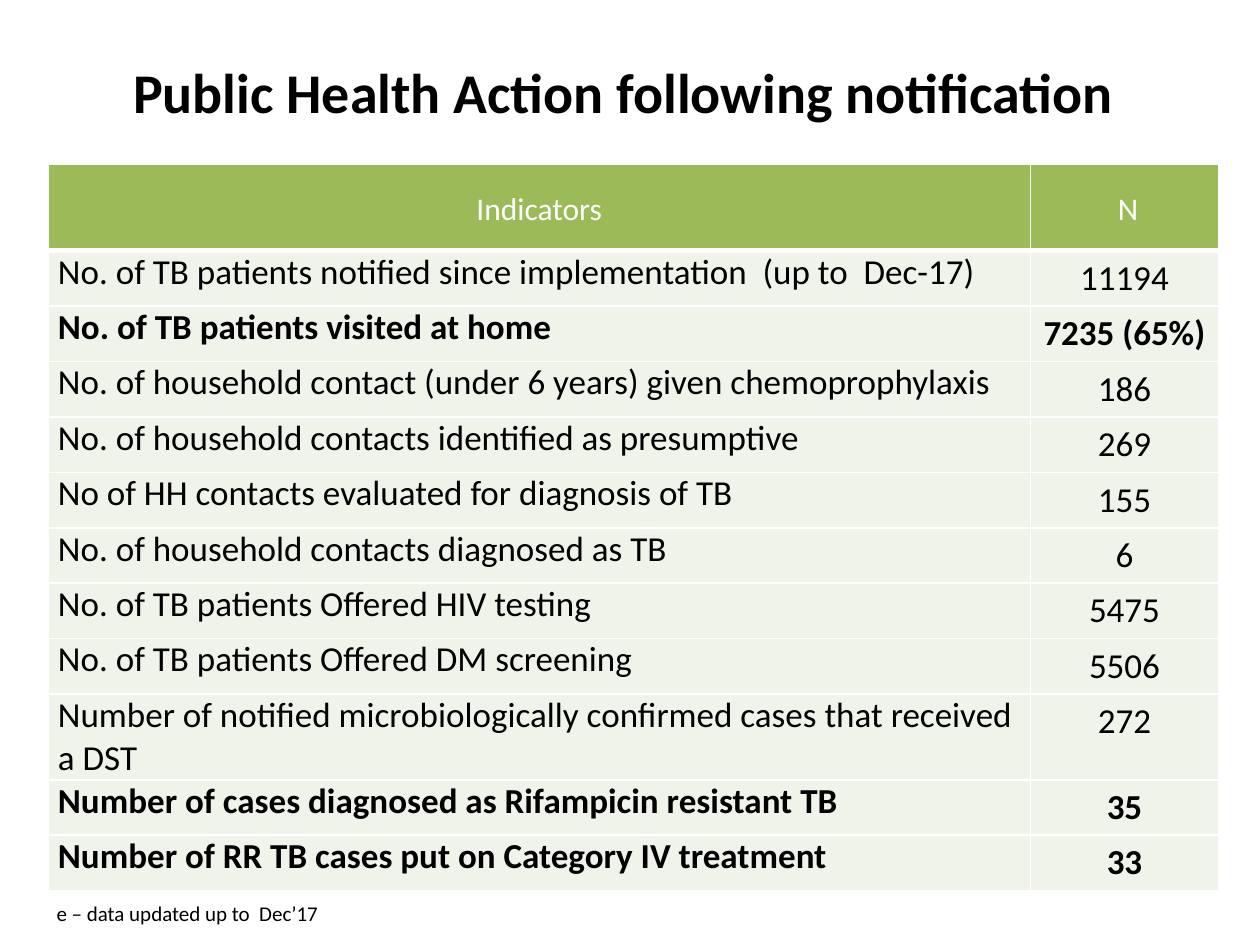
"""Build the slide on public health action following notification."""
from lxml import etree
from pptx import Presentation
from pptx.dml.color import RGBColor
from pptx.enum.text import MSO_ANCHOR, PP_ALIGN
from pptx.oxml.ns import qn
from pptx.util import Inches, Pt

TITLE = "Public Health Action following notification "
FOOTNOTE = "e – data updated up to  Dec’17"
HEADER = ("Indicators", " N")
INDICATORS = [
    ("No. of TB patients notified since implementation  (up to  Dec-17)", "11194"),
    ("No. of TB patients visited at home", "7235 (65%)"),
    ("No. of household contact (under 6 years) given chemoprophylaxis", "186"),
    ("No. of household contacts identified as presumptive", "269"),
    ("No of HH contacts evaluated for diagnosis of TB", "155"),
    ("No. of household contacts diagnosed as TB", "6"),
    ("No. of TB patients Offered HIV testing", "5475"),
    ("No. of TB patients Offered DM screening", "5506"),
    ("Number of notified microbiologically confirmed cases that received a DST", "272"),
    ("Number of cases diagnosed as Rifampicin resistant TB", "35"),
    ("Number of RR TB cases put on Category IV treatment", "33"),
]
BOLD_ROWS = {2, 10, 11}

BLACK = RGBColor(0x00, 0x00, 0x00)
WHITE = RGBColor(0xFF, 0xFF, 0xFF)
GREEN = RGBColor(0x9B, 0xBB, 0x59)
PALE_GREEN = RGBColor(0xEF, 0xF3, 0xEA)
CENTER, LEFT = PP_ALIGN.CENTER, PP_ALIGN.LEFT
MIDDLE, TOP = MSO_ANCHOR.MIDDLE, MSO_ANCHOR.TOP

SLIDE_SIZE = (10, 7.5)
TITLE_BOX = (0.5, 0.3, 9, 0.85)
FOOTNOTE_BOX = (0.35, 7.1, 9.29, 0.3)
TABLE_CORNER = (0.38, 1.3)
COLUMN_WIDTHS = (7.8, 1.49)
HEADER_HEIGHT, ROW_HEIGHT = 0.69, 0.44
CELL_FORMAT = {
    "margin_left": Inches(0.08), "margin_right": Inches(0.08),
    "margin_top": 0, "margin_bottom": 0,
}


def set_text(text_frame, text, size, color=BLACK, bold=False, **paragraph_format):
    text_frame.text = text
    paragraph = text_frame.paragraphs[0]
    for name, value in paragraph_format.items():
        setattr(paragraph, name, value)
    font = paragraph.runs[0].font
    font.color.rgb = color
    for name, value in {"name": "Calibri", "size": Pt(size), "bold": bold}.items():
        setattr(font, name, value)


def add_borders(cell, bottom_width):
    properties = cell._tc.get_or_add_tcPr()
    for side, width in (("L", 1), ("R", 1), ("T", 1), ("B", bottom_width)):
        line = etree.SubElement(properties, qn(f"a:ln{side}"), w=str(Pt(width)))
        fill = etree.SubElement(line, qn("a:solidFill"))
        etree.SubElement(fill, qn("a:srgbClr"), val=str(WHITE))


def add_indicator_table(slide):
    rows = [HEADER, *INDICATORS]
    heights = [HEADER_HEIGHT] + [ROW_HEIGHT] * len(INDICATORS)
    box = (*TABLE_CORNER, sum(COLUMN_WIDTHS), sum(heights))
    table = slide.shapes.add_table(len(rows), len(HEADER), *map(Inches, box)).table
    for column, width in zip(table.columns, COLUMN_WIDTHS):
        column.width = Inches(width)
    for row_index, (texts, height) in enumerate(zip(rows, heights)):
        is_header = row_index == 0
        table.rows[row_index].height = Inches(height)
        for column_index, text in enumerate(texts):
            centered = is_header or column_index == 1
            cell = table.cell(row_index, column_index)
            anchor = MIDDLE if is_header else TOP
            for name, value in {**CELL_FORMAT, "vertical_anchor": anchor}.items():
                setattr(cell, name, value)
            add_borders(cell, 3 if is_header else 1)
            cell.fill.solid()
            cell.fill.fore_color.rgb = GREEN if is_header else PALE_GREEN
            set_text(
                cell.text_frame, text, 18 if is_header else 20,
                WHITE if is_header else BLACK, row_index in BOLD_ROWS,
                alignment=CENTER if centered else LEFT,
                line_spacing=1.15 if centered else 1.0,
            )


def main():
    presentation = Presentation()
    presentation.slide_width, presentation.slide_height = map(Inches, SLIDE_SIZE)
    slide = presentation.slides.add_slide(presentation.slide_layouts[5])
    add_indicator_table(slide)

    title = slide.shapes.title
    title.left, title.top, title.width, title.height = map(Inches, TITLE_BOX)
    title.text_frame.vertical_anchor = MIDDLE
    set_text(title.text_frame, TITLE, 32, bold=True, alignment=CENTER)

    footnote = slide.shapes.add_textbox(*map(Inches, FOOTNOTE_BOX))
    footnote.text_frame.word_wrap = True
    set_text(footnote.text_frame, FOOTNOTE, 12, alignment=LEFT)
    presentation.save("out.pptx")


if __name__ == "__main__":
    main()
